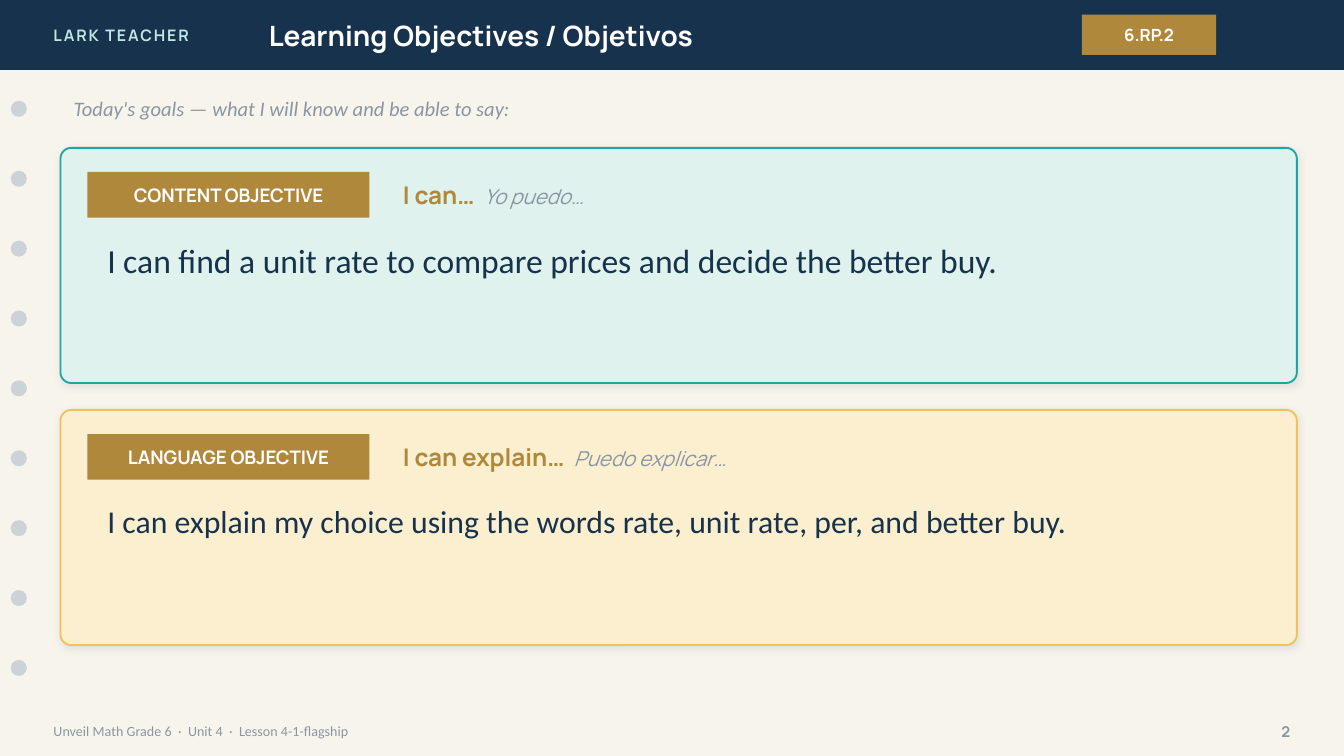
import pptx
import pptx.util
import pptx.dml.color
import pptx.enum.shapes
import pptx.enum.text
import pptx.oxml
import pptx.oxml.ns

Inches, Pt = pptx.util.Inches, pptx.util.Pt
KIND = pptx.enum.shapes.MSO_SHAPE
ALIGN = pptx.enum.text.PP_ALIGN
ANCHOR = pptx.enum.text.MSO_ANCHOR
RGB = pptx.dml.color.RGBColor.from_string

COLORS = {
    "paper": "F7F4EC", "navy": "17324D", "gold": "B0883B", "white": "FFFFFF",
    "mint": "BFE6E2", "gray": "8A96A3", "dot": "CBD3D9", "shade": "1C2E42",
    "teal": "1FA6A2", "aqua": "DFF2EE", "amber": "F2C15B", "cream": "FBEFD0",
}


def add_block(kind, box, fill, line=None):
    shape = slide.shapes.add_shape(kind, *map(Inches, box))
    shape.shadow.inherit = False
    shape.fill.solid()
    shape.fill.fore_color.rgb = RGB(COLORS[fill])
    if line:
        shape.line.color.rgb = RGB(COLORS[line])
        shape.line.width = Pt(1)
    else:
        shape.line.fill.background()
    return shape


def write(target, runs, align=ALIGN.LEFT, anchor=ANCHOR.MIDDLE, leading=None):
    """Fill a shape, or a new text box at target, with styled runs.

    A run is (text, size, font, color, style, spacing); style holds b and i.
    """
    if isinstance(target, tuple):
        target = slide.shapes.add_textbox(*map(Inches, target))
    frame = target.text_frame
    frame.word_wrap = True
    frame.auto_size = pptx.enum.text.MSO_AUTO_SIZE.NONE
    frame.vertical_anchor = anchor
    para = frame.paragraphs[0]
    para.alignment = align
    if leading:
        para.line_spacing = leading
    for text, size, font, color, style, gap in runs:
        run = para.add_run()
        run.text = text
        run.font.size = Pt(size)
        run.font.name = font
        run.font.bold = "b" in style
        run.font.italic = "i" in style
        run.font.color.rgb = RGB(COLORS[color])
        if gap:
            run.font._element.set("spc", str(round(gap * 100)))


deck = pptx.Presentation()
deck.slide_width = Inches(10)
deck.slide_height = deck.slide_width * 9 // 16
slide = deck.slides.add_slide(deck.slide_layouts[5])
slide.background.fill.solid()
slide.background.fill.fore_color.rgb = RGB(COLORS["paper"])

# Header
add_block(KIND.RECTANGLE, (0, 0, 10, 0.52), "navy")
write((0.3, 0, 2.4, 0.52), [("LARK TEACHER", 8.5, "Manrope", "mint", "b", 1)])
title = slide.shapes.title
title.left, title.top = Inches(1.9), Inches(0)
title.width, title.height = Inches(5.6), Inches(0.52)
write(title, [("Learning Objectives / Objetivos", 15, "Manrope", "white", "b", 0)])
slide.shapes._spTree.append(title._element)  # in front of the header bar
badge = add_block(KIND.RECTANGLE, (8.05, 0.11, 1, 0.3), "gold")
write(badge, [("6.RP.2", 9, "Manrope", "white", "b", 0)], ALIGN.CENTER)

# Binder holes
for row in range(9):
    add_block(KIND.OVAL, (0.08, 0.75 + 0.52 * row, 0.12, 0.12), "dot")

# Footer, with wide spaces around the dots
foot = [("Unveil Math Grade 6", 0)]
for part in ("Unit 4", "Lesson 4-1-flagship"):
    foot += [(" ", 1.7), ("·", 0), (" ", 1.7), (part, 0)]
write((0.3, 5.3, 7, 0.28),
      [(text, 7.5, "Calibri", "gray", "", gap) for text, gap in foot])
write((9.2, 5.3, 0.5, 0.28), [("2", 8, "Manrope", "gray", "b", 0)], ALIGN.RIGHT)

# Goals
write((0.45, 0.66, 9.2, 0.3), [
    ("Today's goals — what I will know and be able to say:",
     11, "Calibri", "gray", "i", 0)])

goals = [
    ("CONTENT OBJECTIVE", "I can…", "Yo puedo…",
     "I can find a unit rate to compare prices and decide the better buy.",
     18, "aqua", "teal"),
    ("LANGUAGE OBJECTIVE", "I can explain…", "Puedo explicar…",
     "I can explain my choice using the words rate, unit rate, per, and better buy.",
     17, "cream", "amber"),
]
for row, (label, stem, gloss, goal, size, fill, line) in enumerate(goals):
    top = 1.1 + 1.95 * row
    card = add_block(KIND.ROUNDED_RECTANGLE, (0.45, top, 9.2, 1.75), fill, line)
    card.adjustments[0] = 0.046
    effects = card._element.spPr.find(pptx.oxml.ns.qn("a:effectLst"))
    effects.append(pptx.oxml.parse_xml(
        f'<a:outerShdw {pptx.oxml.ns.nsdecls("a")} blurRad="{Pt(4)}" '
        f'dist="{Pt(1)}" dir="5400000" algn="bl" rotWithShape="0">'
        f'<a:srgbClr val="{COLORS["shade"]}"><a:alpha val="10000"/></a:srgbClr>'
        '</a:outerShdw>'))
    tag = add_block(KIND.RECTANGLE, (0.65, top + 0.18, 2.1, 0.34), "gold")
    write(tag, [(label, 10, "Manrope", "white", "b", 0)], ALIGN.CENTER)
    write((2.9, top + 0.18, 6.6, 0.34), [
        (stem, 13, "Manrope", "gold", "b", 0),
        (" ", 13, "Manrope", "gold", "b", 2.5),
        (gloss, 11, "Manrope", "gray", "i", 0)])
    write((0.7, top + 0.62, 8.7, 1), [(goal, size, "Calibri", "navy", "", 0)],
          anchor=ANCHOR.TOP, leading=1.05)

deck.save("out.pptx")
